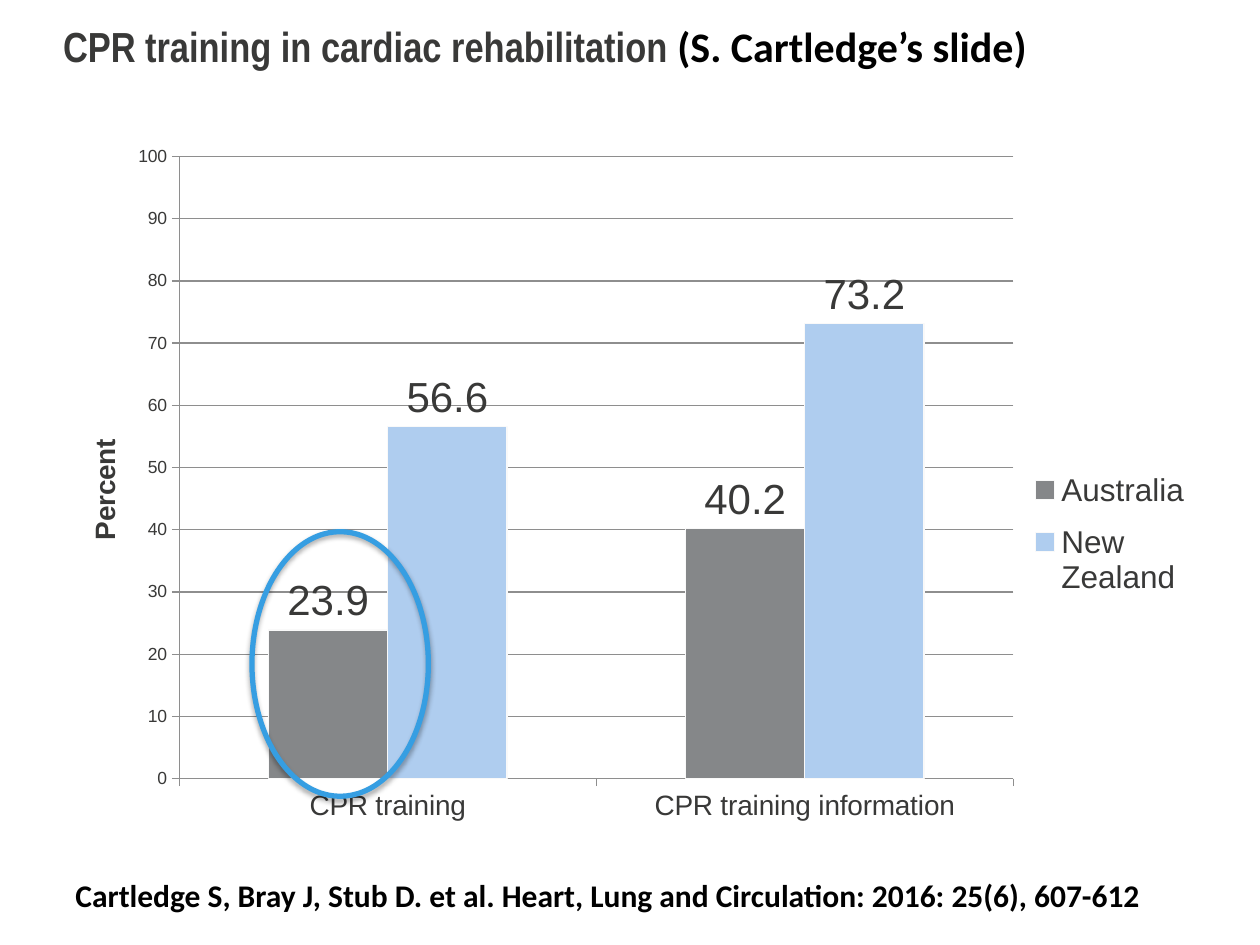
from dataclasses import dataclass
from typing import Any

from lxml.etree import SubElement
from pptx import Presentation
from pptx.chart.data import CategoryChartData
from pptx.dml.color import RGBColor
from pptx.enum.chart import XL_CHART_TYPE, XL_LABEL_POSITION, XL_LEGEND_POSITION, XL_TICK_MARK
from pptx.enum.shapes import MSO_SHAPE
from pptx.enum.text import MSO_ANCHOR, MSO_AUTO_SIZE, PP_ALIGN
from pptx.oxml import parse_xml
from pptx.oxml.ns import nsdecls, qn
from pptx.util import Inches, Pt

INK = "393938"
GRID = "8E8E8E"


@dataclass
class Run:
    text: str
    size: float
    face: str
    hue: str
    bold: bool = True


@dataclass
class Group:
    name: str
    rates: tuple[float, ...]
    hue: str


GROUPS = [
    Group("Australia", (23.9, 40.2), "858789"),
    Group("New Zealand", (56.6, 73.2), "AFCDEF"),
]


def shade(hue: str) -> RGBColor:
    return RGBColor.from_string(hue)


def apply(item: Any, form: dict[str, Any]) -> None:
    for key, value in form.items():
        setattr(item, key, value)


def style(font: Any, size: float, face: str = "Arial", hue: str = INK, bold: bool = False) -> None:
    apply(font, {"size": Pt(size), "name": face, "bold": bold})
    font.color.rgb = shade(hue)


def rule(line: Any, hue: str, width: float) -> None:
    line.color.rgb = shade(hue)
    line.width = Pt(width)


def write(frame: Any, runs: list[Run]) -> None:
    para = frame.paragraphs[0]
    para.alignment = PP_ALIGN.LEFT
    for part in runs:
        run = para.add_run()
        run.text = part.text
        style(run.font, part.size, part.face, part.hue, part.bold)


def lay_out(node: Any, index: int, spots: dict[str, Any]) -> None:
    for old in node.findall(qn("c:layout")):
        node.remove(old)
    layout = parse_xml(f"<c:layout {nsdecls('c')}><c:manualLayout/></c:layout>")
    for key, value in spots.items():
        SubElement(layout[0], qn(f"c:{key}")).set("val", str(value))
    node.insert(index, layout)


def add_title(slide: Any) -> None:
    title = slide.shapes.title
    apply(title, {"left": Inches(0.5), "top": Inches(0.16),
                  "width": Inches(9.38), "height": Inches(0.56)})
    frame = title.text_frame
    apply(frame, {"margin_left": 0, "margin_top": 0, "margin_right": Inches(0.1),
                  "margin_bottom": Inches(0.05), "word_wrap": True,
                  "auto_size": MSO_AUTO_SIZE.NONE, "vertical_anchor": MSO_ANCHOR.TOP})
    write(frame, [
        Run("CPR training in cardiac rehabilitation ", 24, "Arial Narrow", INK),
        Run("(S. Cartledge’s slide)", 24, "Calibri", "000000"),
    ])


def add_bars(slide: Any) -> None:
    data = CategoryChartData()
    data.categories = ["CPR training", "CPR training information"]
    for group in GROUPS:
        data.add_series(group.name, group.rates)
    chart = slide.shapes.add_chart(
        XL_CHART_TYPE.COLUMN_CLUSTERED,
        Inches(0.28), Inches(0.96), Inches(9.22), Inches(5.65), data).chart
    style(chart.font, 10)
    apply(chart, {"has_title": False, "has_legend": True})

    plot = chart.plots[0]
    apply(plot, {"gap_width": 150, "overlap": 0, "vary_by_categories": False})
    for bars, group in zip(plot.series, GROUPS):
        bars.format.fill.solid()
        bars.format.fill.fore_color.rgb = shade(group.hue)
        rule(bars.format.line, "F9F9F9", 0.75)
        labels = bars.data_labels
        apply(labels, {"show_value": True, "position": XL_LABEL_POSITION.OUTSIDE_END})
        style(labels.font, 24)

    for axis, size in ((chart.category_axis, 16), (chart.value_axis, 10)):
        axis.major_tick_mark = XL_TICK_MARK.OUTSIDE
        style(axis.tick_labels.font, size)
        rule(axis.format.line, GRID, 0.75)
    scale = chart.value_axis
    apply(scale, {"minimum_scale": 0, "maximum_scale": 100, "major_unit": 10,
                  "has_major_gridlines": True})
    rule(scale.major_gridlines.format.line, GRID, 0.75)
    head = scale.axis_title
    write(head.text_frame, [Run("Percent", 16, "Arial", INK)])
    node = head._element
    node.find(".//" + qn("a:bodyPr")).set("rot", "-5400000")
    lay_out(node, 1, {"xMode": "edge", "yMode": "edge", "x": 0.04, "y": 0.44})

    legend = chart.legend
    apply(legend, {"position": XL_LEGEND_POSITION.RIGHT, "include_in_layout": False})
    style(legend.font, 18)
    lay_out(legend._element, 1, {"xMode": "edge", "yMode": "edge",
                                 "x": 0.85, "y": 0.47, "w": 0.15, "h": 0.22})
    area = chart._chartSpace.find(".//" + qn("c:plotArea"))
    lay_out(area, 0, {"layoutTarget": "inner", "xMode": "edge", "yMode": "edge",
                      "x": 0.124, "y": 0.05, "w": 0.718, "h": 0.874})


def add_source(slide: Any) -> None:
    box = slide.shapes.add_textbox(Inches(0.5), Inches(6.9), Inches(9.81), Inches(0.4))
    apply(box.text_frame, {"word_wrap": True, "auto_size": MSO_AUTO_SIZE.SHAPE_TO_FIT_TEXT})
    cite = "Cartledge S, Bray J, Stub D. et al. Heart, Lung and Circulation: 2016: 25(6), 607-612"
    write(box.text_frame, [Run(cite, 18, "Calibri", "000000")])


def add_ring(slide: Any) -> None:
    ring = slide.shapes.add_shape(
        MSO_SHAPE.OVAL, Inches(2), Inches(4.22), Inches(1.4), Inches(2.1))
    ring.fill.background()
    rule(ring.line, "369EE2", 3)
    ring.shadow.inherit = False
    glow = ring._element.spPr.find(qn("a:effectLst"))
    glow.append(parse_xml(
        f'<a:outerShdw {nsdecls("a")} blurRad="{Pt(3.1)}" dist="{Pt(1.8)}" dir="5400000" '
        'rotWithShape="0"><a:srgbClr val="000000"><a:alpha val="35000"/></a:srgbClr>'
        '</a:outerShdw>'))


def main() -> None:
    deck = Presentation()
    apply(deck, {"slide_width": Inches(10), "slide_height": Inches(7.5)})
    slide = deck.slides.add_slide(deck.slide_layouts[5])
    for draw in (add_title, add_bars, add_source, add_ring):
        draw(slide)
    deck.save("out.pptx")


if __name__ == "__main__":
    main()
